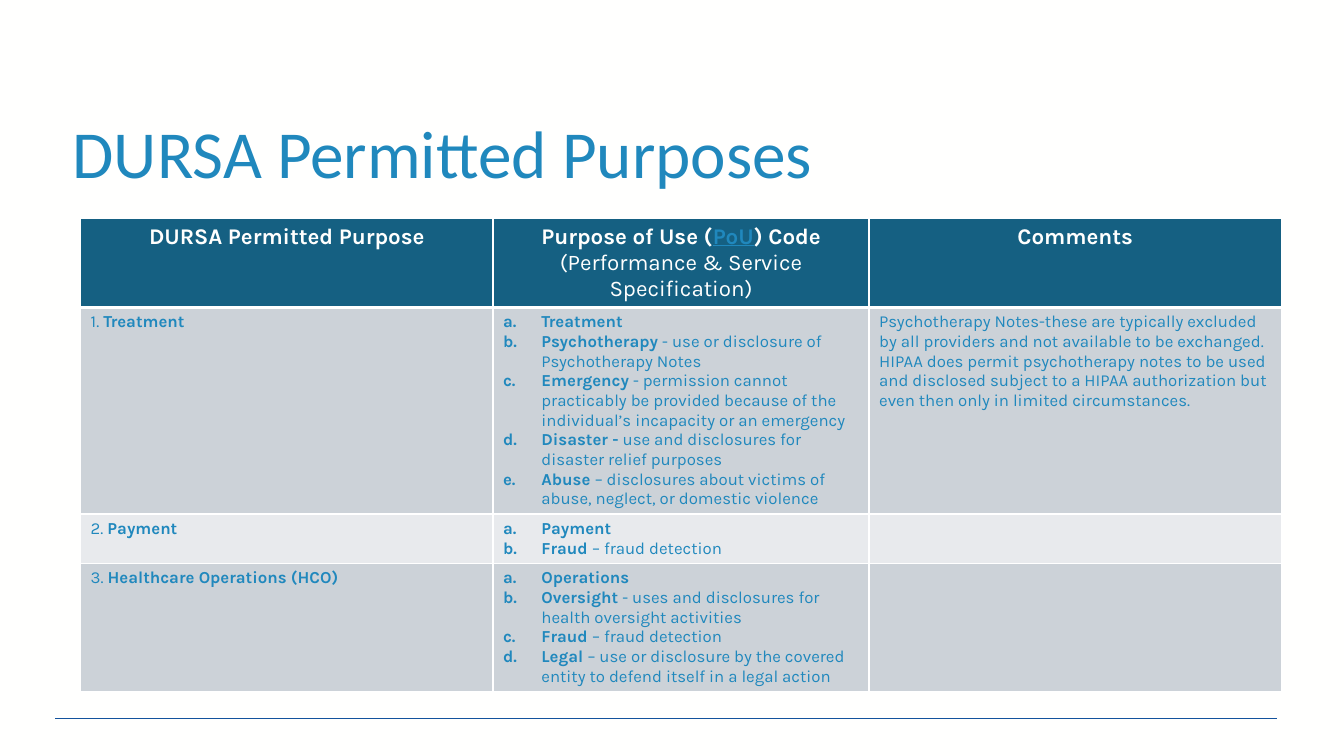
import pptx
import pptx.dml.color
import pptx.enum.shapes
import pptx.enum.text
import pptx.oxml
import pptx.oxml.ns
import pptx.util
from pptx.util import Inches

RGBColor = pptx.dml.color.RGBColor
ALIGN = pptx.enum.text.PP_ALIGN
PAPER = RGBColor(0xFF, 0xFF, 0xFE)
BORDER = RGBColor(0xFF, 0xFF, 0xFF)
BLUE = RGBColor(0x20, 0x88, 0xBD)
RULE = RGBColor(0x13, 0x52, 0x9D)
HEADER = RGBColor(0x15, 0x60, 0x82)
BAND_DARK = RGBColor(0xCC, 0xD2, 0xD8)
BAND_LIGHT = RGBColor(0xE8, 0xEA, 0xED)

COLUMN_WIDTHS = [4.09, 3.73, 4.09]
ROW_HEIGHTS = [0.87, 2.05, 0.49, 1.26]

PURPOSES = [
    ("1. ", "Treatment", [
        ("Treatment", ""),
        ("Psychotherapy", " - use or disclosure of Psychotherapy Notes"),
        ("Emergency", " - permission cannot practicably be provided because of "
                      "the individual’s incapacity or an emergency"),
        ("Disaster -", " use and disclosures for disaster relief purposes"),
        ("Abuse ", "– disclosures about victims of abuse, neglect, or domestic violence"),
    ], "Psychotherapy Notes-these are typically excluded by all providers and not "
       "available to be exchanged. HIPAA does permit psychotherapy notes to be used "
       "and disclosed subject to a HIPAA authorization but even then only in limited "
       "circumstances."),
    ("2. ", "Payment", [
        ("Payment", ""),
        ("Fraud ", "– fraud detection"),
    ], ""),
    ("3. ", "Healthcare Operations (HCO)", [
        ("Operations", ""),
        ("Oversight", " - uses and disclosures for health oversight activities"),
        ("Fraud ", "– fraud detection"),
        ("Legal ", "– use or disclosure by the covered entity to defend itself "
                   "in a legal action"),
    ], ""),
]


def add_text(paragraph, text, size=12, color=BLUE, font="Karla", bold=False, underline=False):
    run = paragraph.add_run()
    run.text = text
    run.font.size = pptx.util.Pt(size)
    run.font.name = font
    run.font.bold = bold
    run.font.underline = underline
    run.font.color.rgb = color


def add_element(parent, xml):
    namespace = pptx.oxml.ns.nsdecls("a")
    tag, rest = xml.split(" ", 1)
    parent.append(pptx.oxml.parse_xml(f"{tag} {namespace} {rest}"))


class PurposesSlide:
    def __init__(self, presentation):
        self.slide = presentation.slides.add_slide(presentation.slide_layouts[5])
        background = self.slide.background.fill
        background.solid()
        background.fore_color.rgb = PAPER

    def title(self, text, left, top, width, height):
        heading = self.slide.shapes.title
        heading.left, heading.top = Inches(left), Inches(top)
        heading.width, heading.height = Inches(width), Inches(height)
        frame = heading.text_frame
        frame.word_wrap = True
        frame.auto_size = pptx.enum.text.MSO_AUTO_SIZE.NONE
        frame.vertical_anchor = pptx.enum.text.MSO_ANCHOR.BOTTOM
        frame.margin_left = Inches(0.05)
        frame.margin_bottom = 0
        frame.paragraphs[0].alignment = ALIGN.LEFT
        add_text(frame.paragraphs[0], text, size=48, font="Calibri")

    def rule(self, left, right, y):
        footer_rule = self.slide.shapes.add_connector(
            pptx.enum.shapes.MSO_CONNECTOR.STRAIGHT,
            Inches(left), Inches(y), Inches(right), Inches(y))
        footer_rule.line.color.rgb = RULE
        footer_rule.line.width = pptx.util.Pt(0.5)
        add_element(footer_rule._element.spPr, "<a:effectLst />")

    def table(self, left, top):
        grid = self.slide.shapes.add_table(
            len(ROW_HEIGHTS), len(COLUMN_WIDTHS), Inches(left), Inches(top),
            Inches(sum(COLUMN_WIDTHS)), Inches(sum(ROW_HEIGHTS))).table
        for column, width in zip(grid.columns, COLUMN_WIDTHS):
            column.width = Inches(width)
        for index, (row, height) in enumerate(zip(grid.rows, ROW_HEIGHTS)):
            row.height = Inches(height)
            fill = HEADER if index == 0 else BAND_DARK if index % 2 else BAND_LIGHT
            for cell in row.cells:
                self.cell_style(cell, fill,
                                top=3 if index == 1 else 1,
                                bottom=3 if index == 0 else 1)
        return grid

    def cell_style(self, cell, fill, top, bottom):
        properties = cell._tc.get_or_add_tcPr()
        for side, points in (("L", 1), ("R", 1), ("T", top), ("B", bottom)):
            add_element(properties,
                        f'<a:ln{side} w="{pptx.util.Pt(points)}"><a:solidFill>'
                        f'<a:srgbClr val="{BORDER}"/></a:solidFill></a:ln{side}>')
        cell.fill.solid()
        cell.fill.fore_color.rgb = fill

    def header(self, cell, *lines):
        for index, runs in enumerate(lines):
            frame = cell.text_frame
            paragraph = frame.add_paragraph() if index else frame.paragraphs[0]
            paragraph.alignment = ALIGN.CENTER
            for text, style in runs:
                add_text(paragraph, text, **{"size": 16, "color": PAPER, "bold": True, **style})

    def lettered_list(self, cell, codes):
        for index, (code, meaning) in enumerate(codes):
            frame = cell.text_frame
            paragraph = frame.add_paragraph() if index else frame.paragraphs[0]
            properties = paragraph._p.get_or_add_pPr()
            properties.set("marL", str(Inches(0.38)))
            properties.set("indent", str(Inches(-0.38)))
            add_element(properties, '<a:buAutoNum type="alphaLcPeriod"/>')
            add_text(paragraph, code, bold=True)
            if meaning:
                add_text(paragraph, meaning)


def main():
    presentation = pptx.Presentation()
    presentation.slide_width = Inches(13.33)
    presentation.slide_height = Inches(7.5)

    page = PurposesSlide(presentation)
    page.rule(0.55, 12.67, 7.13)
    page.title("DURSA Permitted Purposes", 0.67, 0.81, 12, 1.09)

    grid = page.table(0.8, 2.17)
    page.header(grid.cell(0, 0), [("DURSA Permitted Purpose", {})])
    page.header(grid.cell(0, 1),
                [("Purpose of Use (", {}),
                 ("PoU", {"color": BLUE, "bold": False, "underline": True} | {"bold": True}),
                 (") Code", {})],
                [("(Performance & Service Specification)", {"bold": False})])
    page.header(grid.cell(0, 2), [("Comments", {})])

    for row, (number, purpose, codes, comment) in enumerate(PURPOSES, start=1):
        purpose_line = grid.cell(row, 0).text_frame.paragraphs[0]
        add_text(purpose_line, number)
        add_text(purpose_line, purpose, bold=True)
        page.lettered_list(grid.cell(row, 1), codes)
        if comment:
            add_text(grid.cell(row, 2).text_frame.paragraphs[0], comment)

    presentation.save("out.pptx")


if __name__ == "__main__":
    main()
